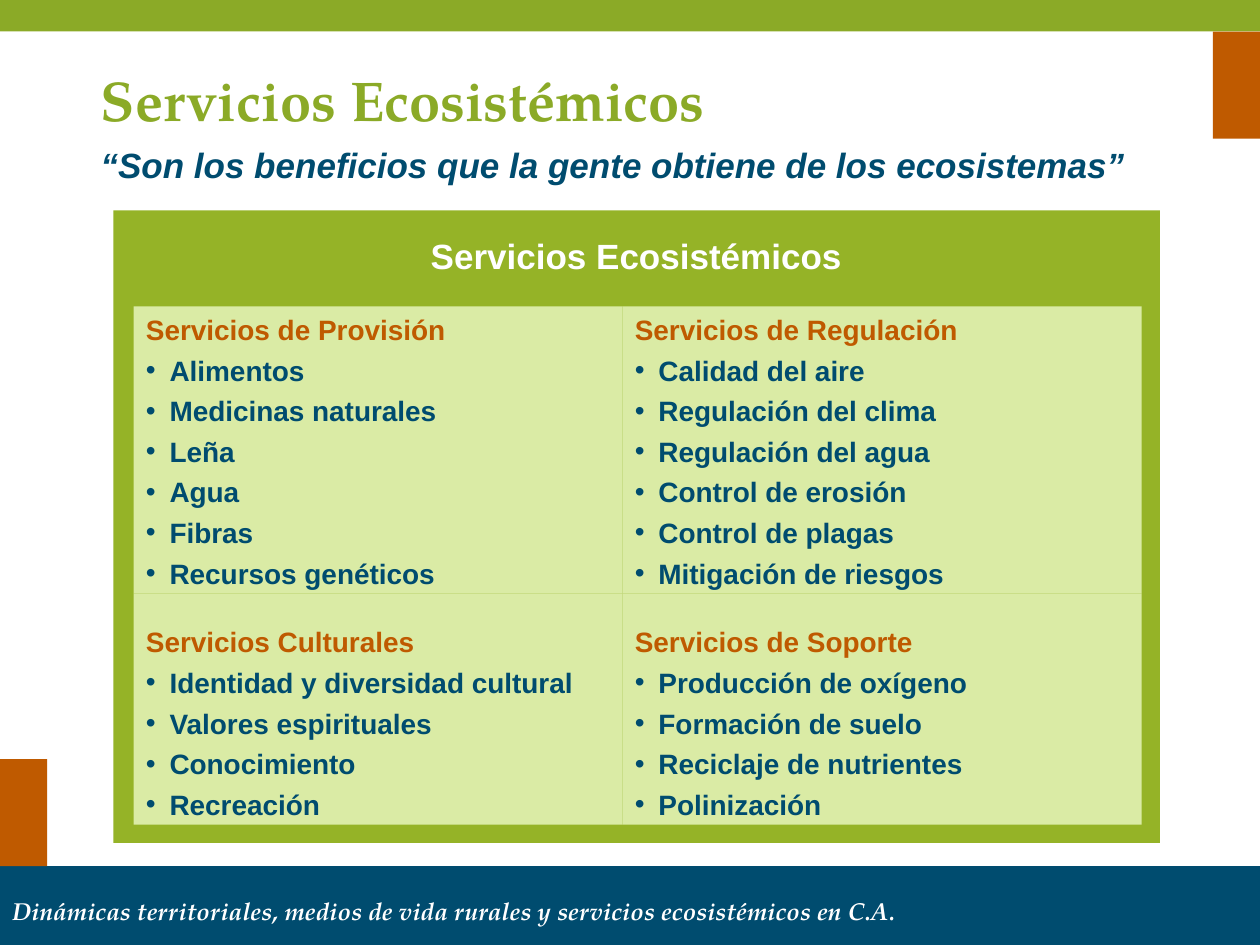
"""Build the slide on ecosystem services."""
from dataclasses import dataclass

import pptx
import pptx.dml.color
import pptx.enum.shapes
import pptx.enum.text
import pptx.oxml
import pptx.oxml.ns
import pptx.util

Pt = pptx.util.Pt
ALIGN = pptx.enum.text.PP_ALIGN
ANCHOR = pptx.enum.text.MSO_ANCHOR
COLORS = {"green": "8BAA27", "panel": "95B327", "light": "DAEBA5",
          "orange": "BF5A00", "blue": "004C6F", "white": "FFFFFF"}
SERIF = "TeX Gyre Pagella"
WIDTH, HEIGHT = 720, 540
INDENT = 13.5


@dataclass(frozen=True)
class Box:
    left: float
    top: float
    width: float
    height: float

    def points(self) -> tuple:
        return Pt(self.left), Pt(self.top), Pt(self.width), Pt(self.height)


@dataclass(frozen=True)
class Service:
    box: Box
    heading: str
    items: tuple
    inset_top: float = 3.6


LEFT, MIDDLE, UPPER, LOWER = 76.3, 355.7, 175, 339.1
LEFT_WIDTH, RIGHT_WIDTH = MIDDLE - LEFT, 296.7
UPPER_HEIGHT, LOWER_HEIGHT = LOWER - UPPER, 132.2

BARS = [
    (Box(0, 495, WIDTH, 45), "blue"),
    (Box(0, 0, WIDTH, 18), "green"),
    (Box(693, 18, 27, 61.2), "orange"),
    (Box(0, 433.8, 27, 61.2), "orange"),
    (Box(64.8, 120.2, 598.1, 361.5), "panel"),
]

SERVICES = [
    Service(Box(MIDDLE, UPPER, RIGHT_WIDTH, UPPER_HEIGHT), "Servicios de Regulación",
            ("Calidad del aire", "Regulación del clima", "Regulación del agua",
             "Control de erosión", "Control de plagas", "Mitigación de riesgos")),
    Service(Box(LEFT, UPPER, LEFT_WIDTH, UPPER_HEIGHT), "Servicios de Provisión",
            ("Alimentos", "Medicinas naturales", "Leña", "Agua", "Fibras",
             "Recursos genéticos")),
    Service(Box(MIDDLE, LOWER, RIGHT_WIDTH, LOWER_HEIGHT), "Servicios de Soporte",
            ("Producción de oxígeno", "Formación de suelo",
             "Reciclaje de nutrientes", "Polinización"), 18),
    Service(Box(LEFT, LOWER, LEFT_WIDTH, LOWER_HEIGHT), "Servicios Culturales",
            ("Identidad y diversidad cultural", "Valores espirituales",
             "Conocimiento", "Recreación"), 18),
]


def rgb(name: str):
    return pptx.dml.color.RGBColor.from_string(COLORS[name])


def add_rect(s, box: Box, color: str):
    sp = s.shapes.add_shape(pptx.enum.shapes.MSO_SHAPE.RECTANGLE, *box.points())
    sp.shadow.inherit = False
    sp.fill.solid()
    sp.fill.fore_color.rgb = rgb(color)
    sp.line.fill.background()
    return sp


def add_bullet(p) -> None:
    pPr = p._p.get_or_add_pPr()
    pPr.set("marL", str(Pt(INDENT)))
    pPr.set("indent", str(-Pt(INDENT)))
    font = pptx.oxml.parse_xml(
        f'<a:buFont {pptx.oxml.ns.nsdecls("a")} typeface="Arial"/>')
    char = pptx.oxml.parse_xml(
        f'<a:buChar {pptx.oxml.ns.nsdecls("a")} char="•"/>')
    pPr.extend([font, char])


def write(p, text: str, *, size: float, color: str, font: str = "Arial",
          italic: bool = False, align=ALIGN.LEFT) -> None:
    p.alignment = align
    r = p.add_run()
    r.text = text
    r.font.name, r.font.size = font, Pt(size)
    r.font.bold, r.font.italic = True, italic
    r.font.color.rgb = rgb(color)


def set_frame(sp, anchor=ANCHOR.TOP, wrap: bool = True):
    tf = sp.text_frame
    tf.word_wrap = wrap
    tf.auto_size = pptx.enum.text.MSO_AUTO_SIZE.NONE
    tf.vertical_anchor = anchor
    return tf


def add_label(s, box: Box, text: str, **fmt) -> None:
    tf = set_frame(s.shapes.add_textbox(*box.points()))
    write(tf.paragraphs[0], text, **fmt)


def add_service(s, service: Service) -> None:
    tf = set_frame(add_rect(s, service.box, "light"))
    tf.margin_top = Pt(service.inset_top)
    p = tf.paragraphs[0]
    p.space_after = Pt(2)
    write(p, service.heading, size=16, color="orange")
    for item in service.items:
        p = tf.add_paragraph()
        p.space_before = p.space_after = Pt(2)
        add_bullet(p)
        write(p, item, size=16, color="blue")


def main() -> None:
    prs = pptx.Presentation()
    prs.slide_width, prs.slide_height = Pt(WIDTH), Pt(HEIGHT)
    s = prs.slides.add_slide(prs.slide_layouts[5])

    for box, color in BARS:
        add_rect(s, box, color)
    footer = add_rect(s, Box(0, 500.4, WIDTH, 39.6), "blue")
    write(set_frame(footer, ANCHOR.MIDDLE, wrap=False).paragraphs[0],
          "Dinámicas territoriales, medios de vida rurales y servicios "
          "ecosistémicos en C.A.",
          size=14, color="white", font=SERIF, italic=True)

    add_label(s, Box(74.2, 130.3, 578.9, 31), "Servicios Ecosistémicos",
              size=20, color="white", align=ALIGN.CENTER)
    for service in SERVICES:
        add_service(s, service)

    title = s.shapes.title
    title.left, title.top, title.width, title.height = Box(50.4, 32.4, 466.6, 46.8).points()
    write(set_frame(title, ANCHOR.BOTTOM).paragraphs[0], "Servicios Ecosistémicos",
          size=32, color="green", font=SERIF)
    add_label(s, Box(50.4, 78.5, 643.7, 31),
              "“Son los beneficios que la gente obtiene de los ecosistemas”",
              size=20, color="blue", italic=True)
    prs.save("out.pptx")


if __name__ == "__main__":
    main()
